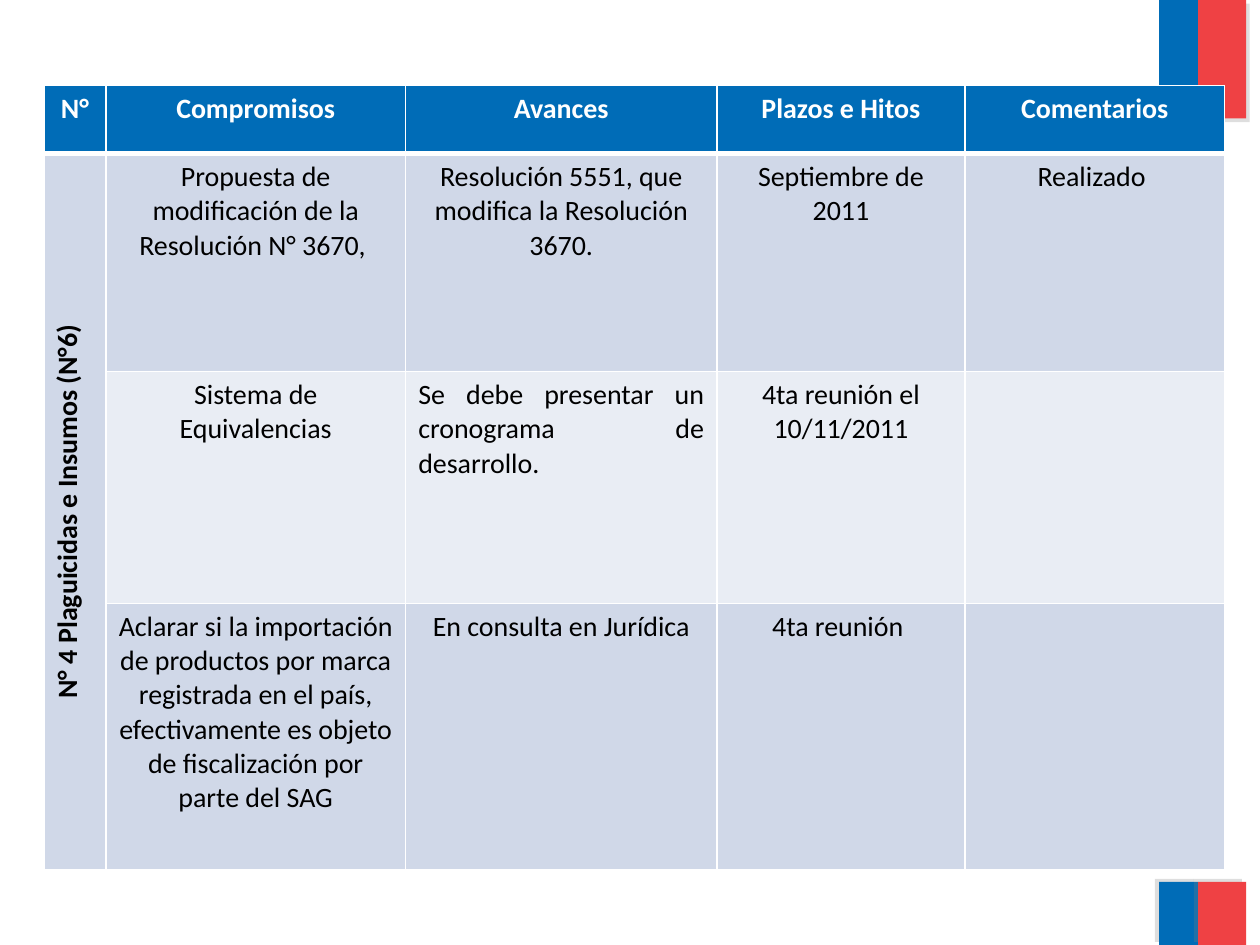
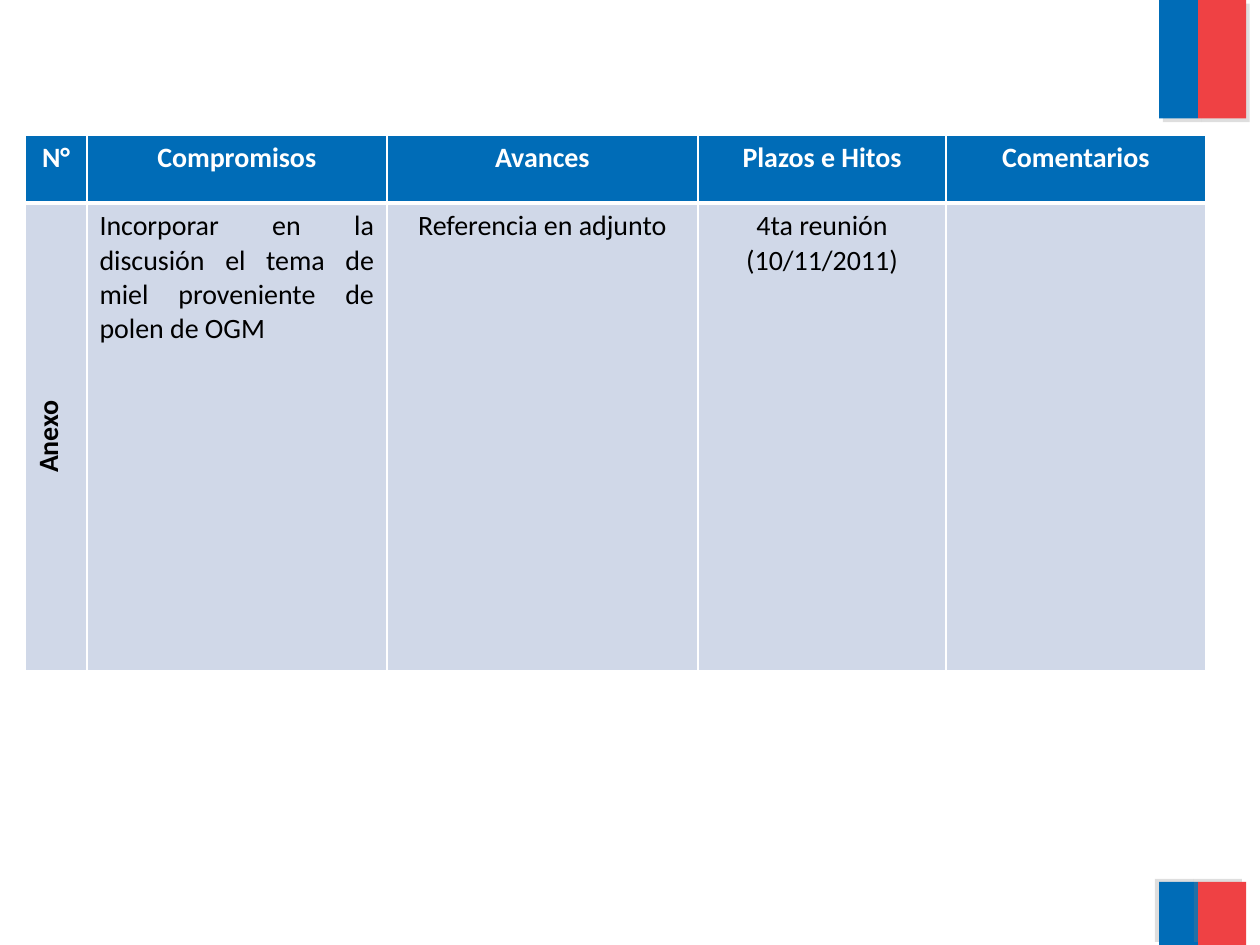
from lxml import etree
from pptx import Presentation
from pptx.dml.color import RGBColor
from pptx.enum.shapes import MSO_SHAPE
from pptx.enum.text import PP_ALIGN
from pptx.oxml import parse_xml
from pptx.oxml.ns import nsdecls, qn
from pptx.util import Inches, Pt

COLORS = {
    "blue": "006CB7",
    "red": "EF4144",
    "shadow": "808080",
    "band_dark": "D0D8E8",
    "band_light": "E9EDF4",
    "white": "FFFFFF",
    "black": "000000",
}
FONT = {"name": "Calibri", "size": Pt(16)}
CENTER, JUSTIFY = PP_ALIGN.CENTER, PP_ALIGN.JUSTIFY
HEADERS = ["N°", "Compromisos", "Avances", "Plazos e Hitos", "Comentarios"]
COL_WIDTHS = [0.49, 2.38, 2.47, 1.97, 2.06]
HEADER_HEIGHT = 0.54

# left, top, width, height, colour, shadow direction in degrees
FLAG_BANDS = [
    (9.2, -0.01, 0.31, 0.95, "blue", 45),
    (9.51, 0, 0.38, 0.94, "red", 45),
    (9.2, 7, 0.31, 0.5, "blue", 215),
    (9.51, 7, 0.38, 0.5, "red", 215),
]

# Each table: position, row label, body row heights, body rows, justified (row, column)
TABLES = [
    {
        "at": (0.35, 0.68),
        "label": "N° 4 Plaguicidas e Insumos (N°6)",
        "heights": [1.73, 1.84, 2.11],
        "rows": [
            ["Propuesta de modificación de la Resolución N° 3670, ",
             "Resolución 5551, que modifica la Resolución 3670.",
             "Septiembre de 2011", "Realizado "],
            ["Sistema de Equivalencias",
             "Se debe presentar un cronograma de desarrollo.",
             "4ta reunión el 10/11/2011", ""],
            ["Aclarar si la importación de productos por marca registrada en el país, "
             "efectivamente es objeto de fiscalización por parte del SAG",
             "En consulta en Jurídica", "4ta reunión ", ""],
        ],
        "justified": (2, 2),
    },
    {
        "at": (0.2, 1.07),
        "label": "Anexo",
        "heights": [3.71],
        "rows": [
            ["Incorporar en la discusión el tema de miel proveniente de polen de OGM",
             "Referencia en adjunto", "4ta reunión (10/11/2011)", ""],
        ],
        "justified": (1, 1),
    },
]


def rgb(name):
    return RGBColor.from_string(COLORS[name])


def add_border(tcPr, side, width):
    ln = etree.SubElement(tcPr, qn(f"a:ln{side}"), w=str(Pt(width)))
    fill = etree.SubElement(ln, qn("a:solidFill"))
    etree.SubElement(fill, qn("a:srgbClr"), val=COLORS["white"])


prs = Presentation()
prs.slide_width, prs.slide_height = Inches(10), Inches(7.5)
blank = prs.slide_layouts[6]
slides = [prs.slides.add_slide(blank) for _ in TABLES]

# The flag bands are drawn on a slide, then moved to the master that all slides share
master_tree = prs.slide_master.shapes._spTree
for left, top, width, height, color, angle in FLAG_BANDS:
    sp = slides[0].shapes.add_shape(
        MSO_SHAPE.RECTANGLE, Inches(left), Inches(top), Inches(width), Inches(height))
    sp.fill.solid()
    sp.fill.fore_color.rgb = rgb(color)
    sp.line.fill.background()
    sp._element.spPr.append(parse_xml(
        f'<a:effectLst {nsdecls("a")}>'
        f'<a:outerShdw dist="{Pt(3)}" dir="{angle * 60000}" algn="ctr" rotWithShape="0">'
        f'<a:srgbClr val="{COLORS["shadow"]}"><a:alpha val="25000"/></a:srgbClr>'
        f'</a:outerShdw></a:effectLst>'))
    master_tree.append(sp._element)

for slide, spec in zip(slides, TABLES):
    heights = [HEADER_HEIGHT] + spec["heights"]
    left, top = spec["at"]
    table = slide.shapes.add_table(
        len(heights), len(COL_WIDTHS), Inches(left), Inches(top),
        Inches(sum(COL_WIDTHS)), Inches(sum(heights))).table
    for column, width in zip(table.columns, COL_WIDTHS):
        column.width = Inches(width)
    for row, height in zip(table.rows, heights):
        row.height = Inches(height)
    if len(heights) > 2:
        table.cell(1, 0).merge(table.cell(len(heights) - 1, 0))

    labels = [spec["label"]] + [""] * (len(spec["rows"]) - 1)
    texts = [HEADERS] + [[label] + row for label, row in zip(labels, spec["rows"])]
    for i, row in enumerate(texts):
        for j, text in enumerate(row):
            cell = table.cell(i, j)
            is_header, is_label = i == 0, i > 0 and j == 0
            tcPr = cell._tc.get_or_add_tcPr()
            for side in "LRTB":
                thick = (side == "B" and is_header) or (side == "T" and i == 1)
                add_border(tcPr, side, 3 if thick else 1)
            cell.fill.solid()
            band = "band_dark" if i % 2 or is_label else "band_light"
            cell.fill.fore_color.rgb = rgb("blue" if is_header else band)
            if is_label:
                tcPr.set("vert", "vert270")
            if not text:
                continue
            p = cell.text_frame.paragraphs[0]
            p.alignment = JUSTIFY if (i, j) == spec["justified"] else CENTER
            r = p.add_run()
            r.text = text
            for key, value in {**FONT, "bold": is_header or is_label}.items():
                setattr(r.font, key, value)
            r.font.color.rgb = rgb("white" if is_header else "black")

prs.save("out.pptx")
